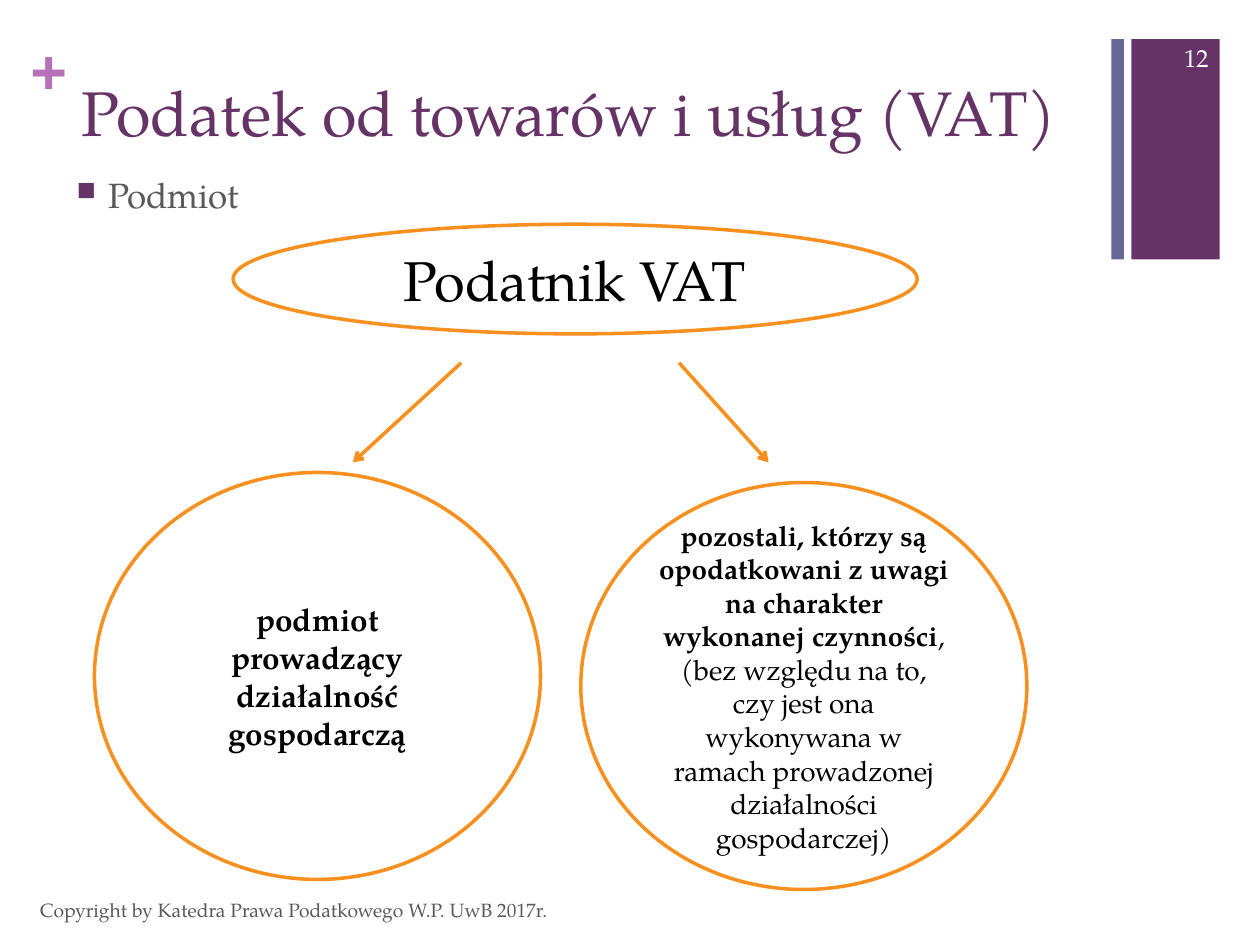
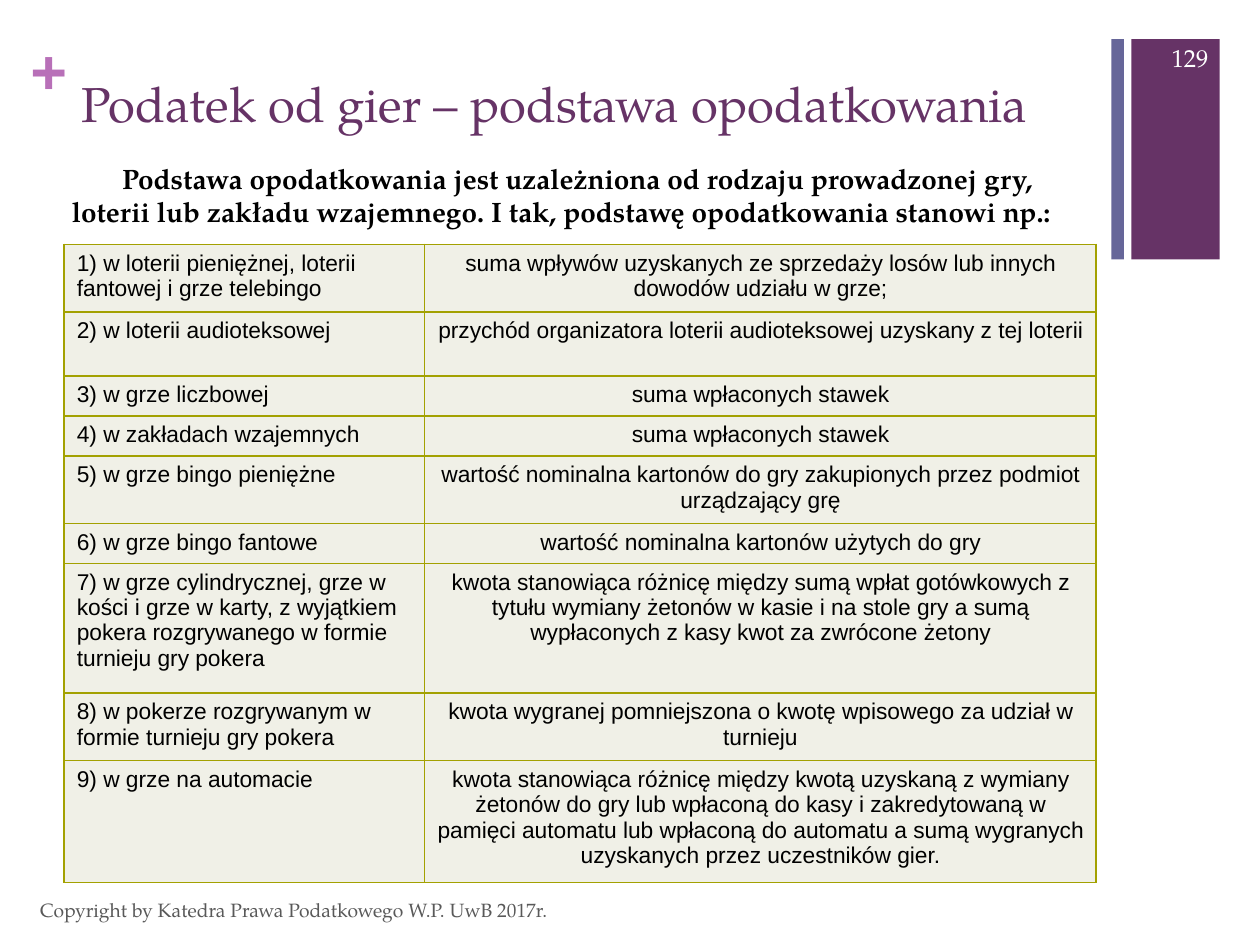
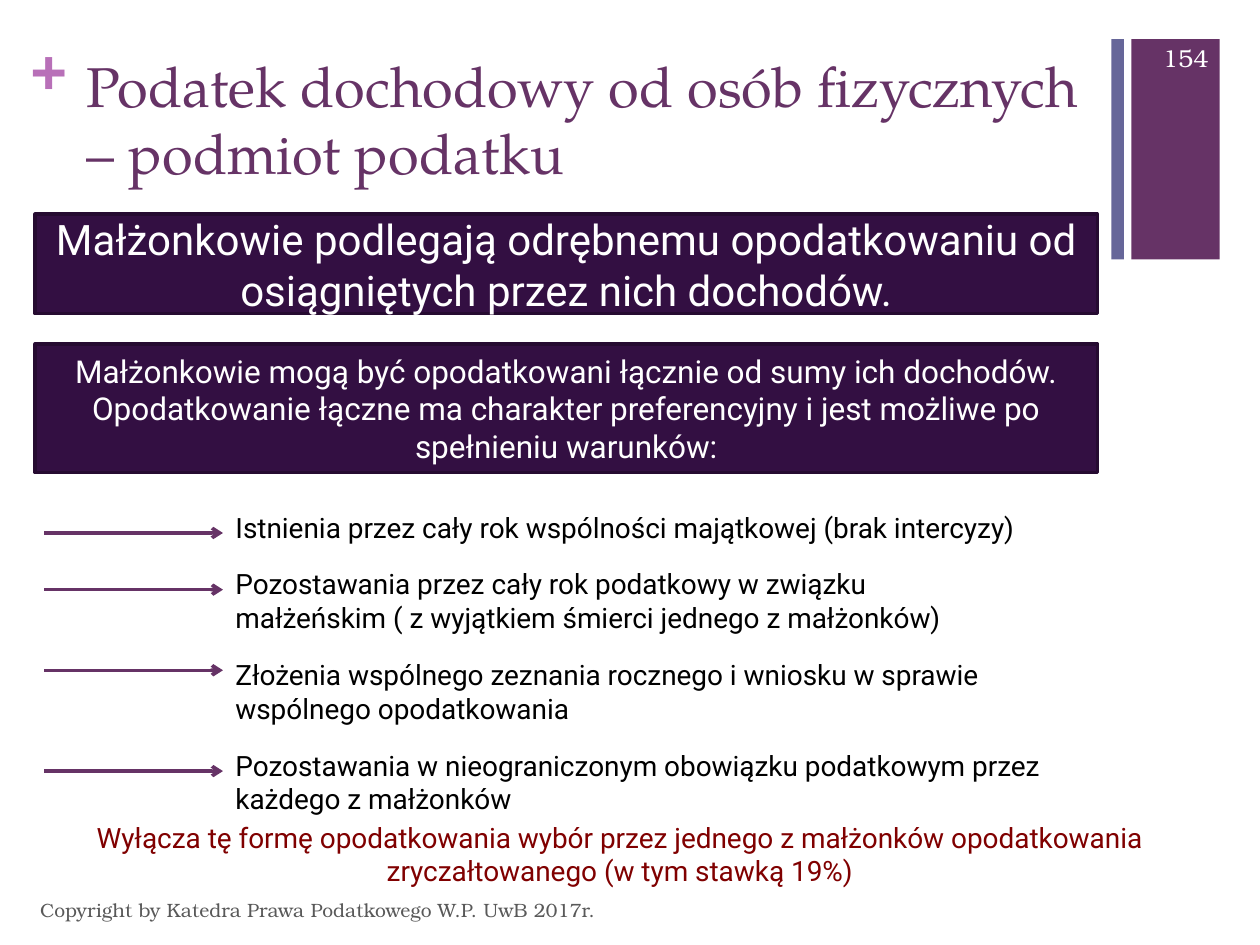
import pptx
import pptx.chart.data
import pptx.dml.color
import pptx.enum.shapes
import pptx.enum.text
import pptx.oxml
import pptx.oxml.ns
import pptx.util

Inches, Pt = pptx.util.Inches, pptx.util.Pt
SHAPE = pptx.enum.shapes.MSO_SHAPE
ALIGN = pptx.enum.text.PP_ALIGN
ANCHOR = pptx.enum.text.MSO_ANCHOR

COLORS = {
    "purple": "663366", "slate": "666699", "plus": "B870B8", "gray": "595959",
    "orange": "F7901E", "olive": "A3A101", "cell": "F0F0E7", "plum": "330F42",
    "plum edge": "260B31", "red": "800000", "black": "000000", "white": "FFFFFF",
}
PAGELLA, BONUM, ROBOTO, ARIAL = "TeX Gyre Pagella", "TeX Gyre Bonum", "Roboto", "Arial"

# ---- Content ----
COPYRIGHT = "Copyright by Katedra Prawa Podatkowego W.P. UwB 2017r."

# title, its size, its left and top, page number, footer font
VAT = ("Podatek od towarów i usług (VAT)", 36, (0.55, 0.53), "12", PAGELLA)
GAMES = ("Podatek od gier – podstawa opodatkowania", 28, (0.55, 0.53), "129", PAGELLA)
INCOME = ("Podatek dochodowy od osób fizycznych – podmiot podatku", 32, (0.59, 0.36), "154", BONUM)

# box, size, runs of (text, bold)
TAXPAYERS = [
    ((1.85, 1.78, 5.43, 0.87), 32, [("Podatnik VAT", False)]),
    ((0.75, 3.75, 3.54, 3.23), 18, [("podmiot prowadzący działalność gospodarczą", True)]),
    ((4.61, 3.83, 3.54, 3.23), 16, [
        ("pozostali, którzy są opodatkowani z uwagi na charakter wykonanej czynności", True),
        (", (bez względu na to, czy jest ona wykonywana w ramach prowadzonej "
         "działalności gospodarczej)", False)]),
]
TAXPAYER_ARROWS = [((5.39, 2.88), (6.1, 3.67)), ((3.66, 2.88), (2.8, 3.67))]

TAX_BASE_INTRO = ("Podstawa opodatkowania jest uzależniona od rodzaju prowadzonej gry, loterii lub "
                  "zakładu wzajemnego. I tak, podstawę opodatkowania stanowi np.: ")
TAX_BASES = [  # game, tax base, row height
    ("1) w loterii pieniężnej, loterii fantowej i grze telebingo",
     "suma wpływów uzyskanych ze sprzedaży losów lub innych dowodów udziału w grze;", 0.51),
    ("2) w loterii audioteksowej",
     "przychód organizatora loterii audioteksowej uzyskany z tej loterii", 0.51),
    ("3) w grze liczbowej", "suma wpłaconych stawek", 0.3),
    ("4) w zakładach wzajemnych", "suma wpłaconych stawek", 0.3),
    ("5) w grze bingo pieniężne",
     "wartość nominalna kartonów do gry zakupionych przez podmiot urządzający grę", 0.51),
    ("6) w grze bingo fantowe", "wartość nominalna kartonów użytych do gry", 0.3),
    ("7) w grze cylindrycznej, grze w kości i grze w karty, z wyjątkiem pokera rozgrywanego "
     "w formie turnieju gry pokera",
     "kwota stanowiąca różnicę między sumą wpłat gotówkowych z tytułu wymiany żetonów w kasie "
     "i na stole gry a sumą wypłaconych z kasy kwot za zwrócone żetony", 1.03),
    ("8) w pokerze rozgrywanym w formie turnieju gry pokera",
     "kwota wygranej pomniejszona o kwotę wpisowego za udział w turnieju", 0.51),
    ("9) w grze na automacie",
     "kwota stanowiąca różnicę między kwotą uzyskaną z wymiany żetonów do gry lub wpłaconą do "
     "kasy i zakredytowaną w pamięci automatu lub wpłaconą do automatu a sumą wygranych "
     "uzyskanych przez uczestników gier.", 0.92),
]
TAX_BASE_COLUMNS = (2.86, 5.33)

SPOUSE_RULES = [  # text, size, top, height
    ("Małżonkowie podlegają odrębnemu opodatkowaniu od osiągniętych przez nich dochodów.",
     24, 1.7, 0.79),
    ("Małżonkowie mogą być opodatkowani łącznie od sumy ich dochodów. Opodatkowanie łączne ma "
     "charakter preferencyjny i jest możliwe po spełnieniu warunków:", 18, 2.73, 1.02),
]
CONDITIONS = [  # paragraphs, lines, width, arrow's drop below the top
    (["Istnienia przez cały rok wspólności majątkowej (brak intercyzy)"], 1, 6.85, 0.23),
    (["Pozostawania przez cały rok podatkowy w związku małżeńskim ( z wyjątkiem śmierci "
      "jednego z małżonków)"], 2, 6.38, 0.23),
    (["Złożenia wspólnego zeznania rocznego i wniosku w sprawie wspólnego opodatkowania"],
     2, 6.54, 0.15),
    (["Pozostawania w nieograniczonym obowiązku podatkowym przez", "każdego z małżonków"],
     2, 7.01, 0.23),
]
EXCLUSION = ("Wyłącza tę formę opodatkowania wybór przez jednego z małżonków opodatkowania "
             "zryczałtowanego (w tym stawką 19%)")


# ---- Helpers ----
def rgb(color):
    return pptx.dml.color.RGBColor.from_string(COLORS[color])


def add_xml(parent, xml):
    declared = xml.replace(" ", " " + pptx.oxml.ns.nsdecls("a") + " ", 1)
    parent.append(pptx.oxml.parse_xml(declared))


def write(frame, paragraphs, size, font=PAGELLA, color="black", bold=False,
          align=ALIGN.LEFT, anchor=ANCHOR.TOP):
    """Fill a text frame; a paragraph is a string or a list of (text, bold) runs."""
    frame.word_wrap = True
    frame.vertical_anchor = anchor
    for index, content in enumerate([paragraphs] if isinstance(paragraphs, str) else paragraphs):
        paragraph = frame.add_paragraph() if index else frame.paragraphs[0]
        paragraph.alignment = align
        for text, is_bold in [(content, bold)] if isinstance(content, str) else content:
            run = paragraph.add_run()
            run.text = text
            run.font.size, run.font.name, run.font.bold = Pt(size), font, is_bold
            run.font.color.rgb = rgb(color)
    return frame


def add_text(slide, box, paragraphs, size, **style):
    frame = slide.shapes.add_textbox(*map(Inches, box)).text_frame
    return write(frame, paragraphs, size, **style)


def add_block(slide, box, fill, edge=None, preset=SHAPE.RECTANGLE):
    block = slide.shapes.add_shape(preset, *map(Inches, box))
    block.shadow.inherit = False
    block.fill.solid()
    block.fill.fore_color.rgb = rgb(fill)
    if edge:
        block.line.color.rgb, block.line.width = rgb(edge), Pt(2)
    else:
        block.line.fill.background()
    return block


def add_arrow(slide, start, end, color):
    arrow = slide.shapes.add_connector(
        pptx.enum.shapes.MSO_CONNECTOR.STRAIGHT, *map(Inches, (*start, *end)))
    arrow.line.color.rgb, arrow.line.width = rgb(color), Pt(2)
    add_xml(arrow.line._get_or_add_ln(), '<a:tailEnd type="arrow"/>')
    add_xml(arrow._element.spPr, "<a:effectLst />")


def format_cell(cell, text, align):
    cell.fill.solid()
    cell.fill.fore_color.rgb = rgb("cell")
    write(cell.text_frame, text, 13, font=ARIAL, align=align)
    properties = cell._tc.get_or_add_tcPr()
    for index, side in enumerate(("lnL", "lnR", "lnT", "lnB")):
        add_xml(properties, f'<a:{side} w="12700"><a:solidFill><a:srgbClr val="{COLORS["olive"]}"/>'
                            f"</a:solidFill></a:{side}>")
        properties.insert(index, properties[-1])  # borders come before the fill


def add_slide(deck, title, size, corner, number, footer_font):
    """Title, corner bands, plus sign, footer and page number."""
    slide = deck.slides.add_slide(deck.slide_layouts[5])
    add_block(slide, (8.98, 0.31, 0.7, 1.75), "purple")
    add_block(slide, (8.82, 0.31, 0.1, 1.75), "slate")
    plus = add_text(slide, (0.24, 0.25, 0.29, 0.61), "+", 36, font=ARIAL, color="plus", bold=True)
    plus.margin_left = plus.margin_right = plus.margin_top = plus.margin_bottom = 0
    heading = slide.shapes.title
    heading.left, heading.top, heading.width, heading.height = map(Inches, (*corner, 8.26, 1.22))
    write(heading.text_frame, title, size, color="purple")
    heading.text_frame.auto_size = pptx.enum.text.MSO_AUTO_SIZE.NONE
    add_text(slide, (0.22, 7.02, 6.7, 0.4), COPYRIGHT, 11, font=footer_font, color="gray",
             anchor=ANCHOR.MIDDLE)
    add_text(slide, (9.08, 0.26, 0.61, 0.4), number, 14, font=footer_font, color="white",
             align=ALIGN.RIGHT, anchor=ANCHOR.MIDDLE)
    return slide


# ---- Slides ----
def build_vat(deck):
    slide = add_slide(deck, *VAT)
    subject = add_text(slide, (0.51, 1.39, 7.92, 0.71), "Podmiot", 20, color="gray").paragraphs[0]
    subject.line_spacing = 0.8
    properties = subject._p.get_or_add_pPr()
    properties.set("marL", str(Inches(0.25)))
    properties.set("indent", str(Inches(-0.25)))
    add_xml(properties, f'<a:buClr ><a:srgbClr val="{COLORS["purple"]}"/></a:buClr>')
    add_xml(properties, '<a:buSzPct val="75000"/>')
    add_xml(properties, '<a:buChar char="■"/>')
    for box, size, runs in TAXPAYERS:
        oval = add_block(slide, box, "white", "orange", SHAPE.FLOWCHART_CONNECTOR)
        write(oval.text_frame, [runs], size, align=ALIGN.CENTER, anchor=ANCHOR.MIDDLE)
    for start, end in TAXPAYER_ARROWS:
        add_arrow(slide, start, end, "orange")


def build_games(deck):
    slide = add_slide(deck, *GAMES)
    intro = add_text(slide, (0.43, 1.23, 8.11, 0.64), TAX_BASE_INTRO, 16, bold=True,
                     align=ALIGN.CENTER)
    intro.paragraphs[0]._p.get_or_add_pPr().set("indent", str(Inches(0.2)))
    box = (0.51, 1.94, sum(TAX_BASE_COLUMNS), sum(row[2] for row in TAX_BASES))
    table = slide.shapes.add_table(len(TAX_BASES), 2, *map(Inches, box)).table
    table.first_row = table.horz_banding = False
    for column, width in zip(table.columns, TAX_BASE_COLUMNS):
        column.width = Inches(width)
    for row, (game, base, height) in zip(table.rows, TAX_BASES):
        row.height = Inches(height)
        format_cell(row.cells[0], game, ALIGN.LEFT)
        format_cell(row.cells[1], base, ALIGN.CENTER)


def build_income(deck):
    slide = add_slide(deck, *INCOME)
    for text, size, top, height in SPOUSE_RULES:
        rule = add_block(slide, (0.28, top, 8.43, height), "plum", "plum edge")
        write(rule.text_frame, text, size, font=ROBOTO, color="white", align=ALIGN.CENTER,
              anchor=ANCHOR.MIDDLE)
    left, top, gap = 1.77, 4.0, 0.08
    for paragraphs, lines, width, drop in CONDITIONS:
        height = 0.1 + 0.27 * lines
        add_text(slide, (left, top, width, height), paragraphs, 16, font=ROBOTO)
        add_arrow(slide, (0.35, top + drop), (left, top + drop), "purple")
        top += height + gap
    add_text(slide, (0.51, 6.46, 8.82, 0.64), EXCLUSION, 16, font=ROBOTO, color="red",
             align=ALIGN.CENTER)


def main():
    deck = pptx.Presentation()
    deck.slide_width, deck.slide_height = Inches(10), Inches(7.5)
    build_vat(deck)
    build_games(deck)
    build_income(deck)
    deck.save("out.pptx")


if __name__ == "__main__":
    main()
